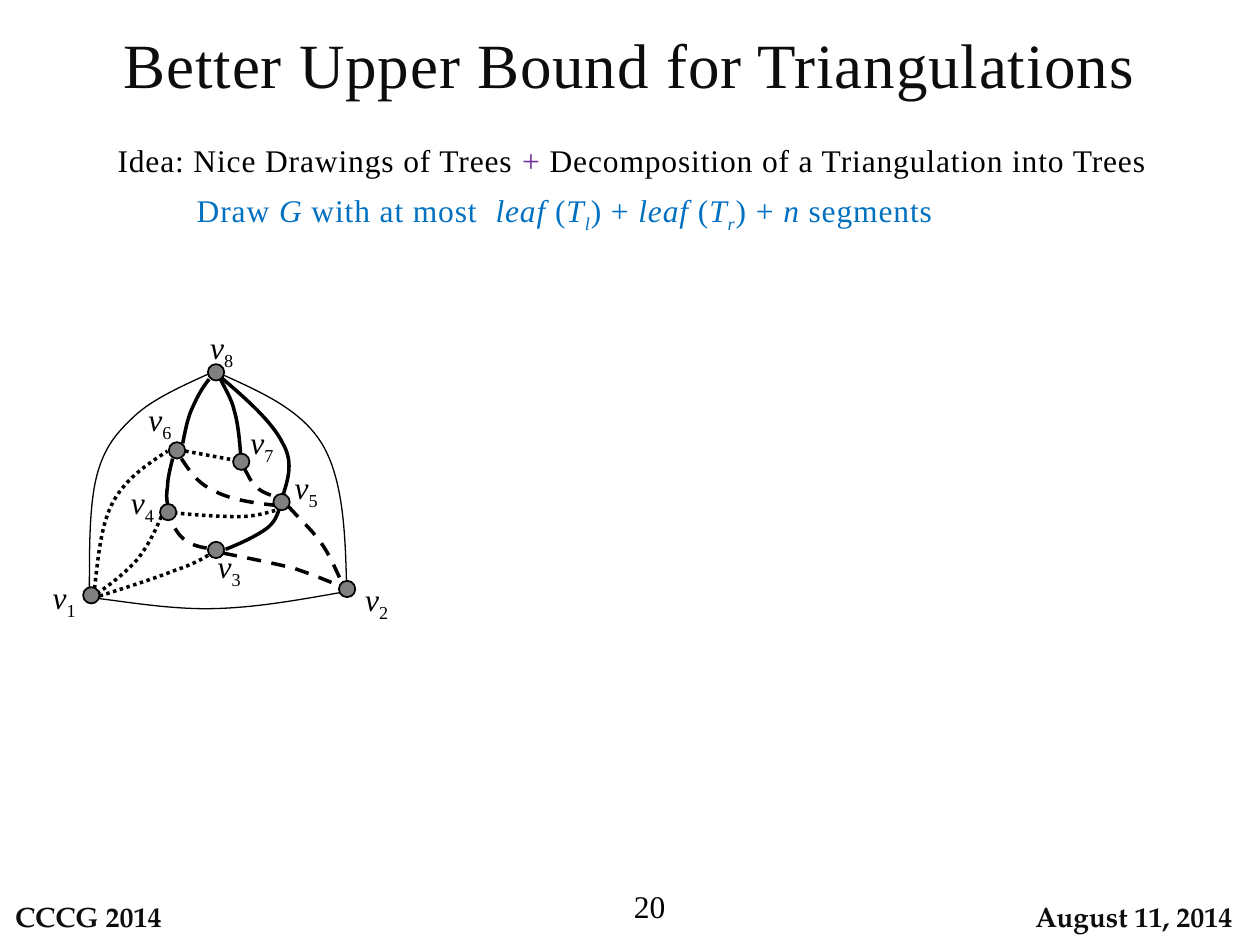
from lxml.etree import SubElement
from pptx import Presentation
from pptx.dml.color import RGBColor
from pptx.enum.dml import MSO_LINE
from pptx.enum.shapes import MSO_CONNECTOR, MSO_SHAPE
from pptx.enum.text import MSO_ANCHOR, MSO_AUTO_SIZE, PP_ALIGN
from pptx.oxml.ns import qn
from pptx.util import Inches, Pt

SERIF = "Times New Roman"
FOOTER_FONT = "TeX Gyre Pagella"
INK, BLACK, BLUE, PURPLE, GREY = "0D0D0D", "000000", "0070C0", "7030A0", "808080"
DOT_SIZE = 0.13
LABEL_SIZE = (0.5, 0.25)

VERTICES = [
    ((0.66, 4.66), (0.26, 4.63)),
    ((2.69, 4.61), (2.74, 4.65)),
    ((1.65, 4.30), (1.57, 4.39)),
    ((1.27, 4.00), (0.88, 3.88)),
    ((2.17, 3.92), (2.18, 3.76)),
    ((1.34, 3.51), (1.02, 3.22)),
    ((1.85, 3.60), (1.83, 3.40)),
    ((1.65, 2.89), (1.51, 2.65)),
]

OUTER_EDGES = [
    [(0.71, 4.66), (0.71, 4.33), (0.71, 4), (0.77, 3.77), (0.83, 3.55), (0.92, 3.44),
     (1.07, 3.3), (1.21, 3.17), (1.43, 3.07), (1.65, 2.97)],
    [(1.78, 2.98), (2.09, 3.12), (2.4, 3.26), (2.56, 3.53), (2.72, 3.8), (2.74, 4.21), (2.75, 4.61)],
    [(0.78, 4.75), (1.09, 4.79), (1.4, 4.84), (1.72, 4.83), (2.05, 4.82), (2.38, 4.76), (2.72, 4.7)],
]
SOLID_EDGES = [
    [(1.45, 3.52), (1.47, 3.42), (1.49, 3.31), (1.53, 3.23), (1.57, 3.14), (1.61, 3.07), (1.66, 3.01)],
    [(1.91, 3.6), (1.9, 3.48), (1.89, 3.36), (1.86, 3.26), (1.84, 3.17), (1.79, 3.09), (1.75, 3.01)],
    [(2.25, 3.92), (2.29, 3.79), (2.33, 3.66), (2.24, 3.51), (2.16, 3.35), (1.96, 3.17), (1.76, 3)],
    [(1.79, 4.36), (1.92, 4.31), (2.04, 4.25), (2.11, 4.2), (2.18, 4.15), (2.2, 4.09), (2.22, 4.03)],
    [(1.33, 4), (1.32, 3.96), (1.32, 3.92), (1.33, 3.86), (1.33, 3.8), (1.35, 3.72), (1.37, 3.64)],
]
DOTTED_EDGES = [
    [(0.75, 4.67), (0.78, 4.42), (0.8, 4.16), (0.9, 3.98), (1, 3.8), (1.16, 3.69), (1.33, 3.58)],
    [(0.79, 4.73), (1.01, 4.66), (1.23, 4.59), (1.38, 4.53), (1.53, 4.48), (1.6, 4.44), (1.68, 4.39)],
    [(1.38, 4.07), (1.57, 4.09), (1.76, 4.1), (1.89, 4.1), (2.03, 4.1), (2.11, 4.07), (2.19, 4.05)],
    [(0.77, 4.71), (0.89, 4.63), (1, 4.54), (1.09, 4.44), (1.17, 4.34), (1.23, 4.22), (1.28, 4.1)],
]
DASHED_EDGES = [
    [(1.94, 3.72), (1.97, 3.77), (1.99, 3.83), (2.04, 3.87), (2.08, 3.91), (2.15, 3.93), (2.21, 3.95)],
    [(1.44, 3.64), (1.5, 3.73), (1.56, 3.83), (1.69, 3.89), (1.81, 3.96), (1.99, 3.99), (2.18, 4.01)],
    [(2.29, 4.02), (2.38, 4.12), (2.48, 4.21), (2.55, 4.31), (2.62, 4.41), (2.67, 4.53), (2.72, 4.64)],
    [(1.77, 4.39), (1.97, 4.43), (2.17, 4.47), (2.33, 4.51), (2.48, 4.56), (2.6, 4.61), (2.72, 4.66)],
    [(1.64, 4.35), (1.57, 4.34), (1.51, 4.32), (1.46, 4.28), (1.41, 4.24), (1.38, 4.18), (1.35, 4.12)],
]


def color(hex_code):
    """Turn a hex string into a colour."""
    return RGBColor.from_string(hex_code)


class SlideBuilder:
    """Hold the text style and the current page, and add elements to it."""

    def __init__(self, page, font=SERIF, size=18):
        """Remember the page and the default text style."""
        self.page = page
        self.font = font
        self.size = size

    def add_spans(self, frame, spans, align, anchor=MSO_ANCHOR.MIDDLE, size=None, font=None,
                  bold=False, spacing=0):
        """Fill a text frame with (text, colour, style) spans."""
        frame.auto_size = MSO_AUTO_SIZE.NONE
        frame.vertical_anchor = anchor
        para = frame.paragraphs[0]
        para.alignment = align
        for text, ink, style in spans:
            span = para.add_run()
            span.text = text
            span.font.name = font or self.font
            span.font.size = Pt(size or self.size)
            span.font.bold = bold
            span.font.italic = "italic" in style
            span.font.color.rgb = color(ink)
            properties = span.font._element
            if spacing:
                properties.set("spc", str(spacing))
            if "sub" in style:
                properties.set("baseline", "-25000")

    def title(self, text, area):
        """Place the title placeholder."""
        box = self.page.shapes.title
        box.left, box.top, box.width, box.height = map(Inches, area)
        self.add_spans(box.text_frame, [(text, INK, "")], PP_ALIGN.CENTER, MSO_ANCHOR.TOP, 36,
                       spacing=50)

    def text(self, spans, area, align=PP_ALIGN.CENTER, wrap=True, **style):
        """Add a text box."""
        box = self.page.shapes.add_textbox(*map(Inches, area))
        box.text_frame.word_wrap = wrap
        self.add_spans(box.text_frame, spans, align, **style)

    def footer(self, text, area, align):
        """Add an unfilled rounded footer box."""
        box = self.page.shapes.add_shape(MSO_SHAPE.ROUNDED_RECTANGLE, *map(Inches, area))
        box.shadow.inherit = False
        box.fill.background()
        box.line.fill.background()
        self.add_spans(box.text_frame, [(text, INK, "")], align, size=16, font=FOOTER_FONT, bold=True)

    def stroke(self, line, width, dash=None):
        """Style an edge line."""
        line.color.rgb = color(BLACK)
        line.width = Pt(width)
        if dash:
            line.dash_style = dash

    def curve(self, points, width=2, dash=None):
        """Add a chain of cubic curves from a start and triples of points."""
        start, *rest = [(Inches(x), Inches(y)) for x, y in points]
        builder = self.page.shapes.build_freeform(*start)
        builder.add_line_segments(rest, close=False)
        edge = builder.convert_to_shape()
        segments = list(edge._element.iter(qn("a:lnTo")))
        for first, second, third in zip(*[iter(segments)] * 3):
            first.tag = qn("a:cubicBezTo")
            for segment in (second, third):
                first.append(segment[0])
                segment.getparent().remove(segment)
        edge.shadow.inherit = False
        edge.fill.background()
        self.stroke(edge.line, width, dash)

    def straight(self, start, end, width=2, dash=None):
        """Add a straight edge."""
        edge = self.page.shapes.add_connector(MSO_CONNECTOR.STRAIGHT, *map(Inches, start + end))
        self.stroke(edge.line, width, dash)
        SubElement(edge._element.spPr, qn("a:effectLst"))

    def vertex(self, number, dot_corner, label_corner):
        """Add a vertex dot with its subscripted label."""
        dot = self.page.shapes.add_shape(
            MSO_SHAPE.OVAL, *map(Inches, dot_corner + (DOT_SIZE, DOT_SIZE)))
        dot.shadow.inherit = False
        dot.fill.solid()
        dot.fill.fore_color.rgb = color(GREY)
        self.stroke(dot.line, 1)
        self.text([("v", BLACK, "italic"), (str(number), BLACK, "sub")], label_corner + LABEL_SIZE)


def main():
    """Build and save the deck."""
    deck = Presentation()
    deck.slide_width, deck.slide_height = Inches(10), Inches(7.5)
    slide = SlideBuilder(deck.slides.add_slide(deck.slide_layouts[5]))

    slide.footer("CCCG 2014", (0, 7.05, 1.54, 0.45), PP_ALIGN.LEFT)
    slide.footer("August 11, 2014", (8, 7.05, 2, 0.45), PP_ALIGN.CENTER)
    slide.text([("20", BLACK, "")], (3.05, 6.99, 2.33, 0.4), PP_ALIGN.RIGHT)
    slide.title("Better Upper Bound for Triangulations", (0, 0.15, 10, 1.04))
    slide.text([("Idea: Nice Drawings of Trees ", BLACK, ""), ("+ ", PURPLE, ""),
                ("Decomposition of a Triangulation into Trees ", BLACK, "")],
               (0.66, 1.07, 8.78, 0.4), anchor=MSO_ANCHOR.TOP, spacing=50)
    formula = [(" Draw ", ""), ("G", "italic"), (" with at most  ", "")]
    for side in "lr":
        formula += [("leaf ", "italic"), ("(", ""), ("T", "italic"), (side, "italic sub"), (") + ", "")]
    formula += [("n", "italic"), (" segments", "")]
    slide.text([(text, BLUE, style) for text, style in formula],
               (1.32, 1.47, 6.25, 0.4), wrap=False, anchor=MSO_ANCHOR.TOP, spacing=50)

    for edges, width, dash in [(OUTER_EDGES, 0.75, None), (SOLID_EDGES, 2, None),
                               (DOTTED_EDGES, 2, MSO_LINE.ROUND_DOT),
                               (DASHED_EDGES, 2, MSO_LINE.DASH)]:
        for points in edges:
            slide.curve(points, width, dash)
    slide.straight((1.47, 3.58), (1.85, 3.65), dash=MSO_LINE.ROUND_DOT)
    for number, (dot_corner, label_corner) in enumerate(VERTICES, 1):
        slide.vertex(number, dot_corner, label_corner)

    deck.save("out.pptx")


if __name__ == "__main__":
    main()
